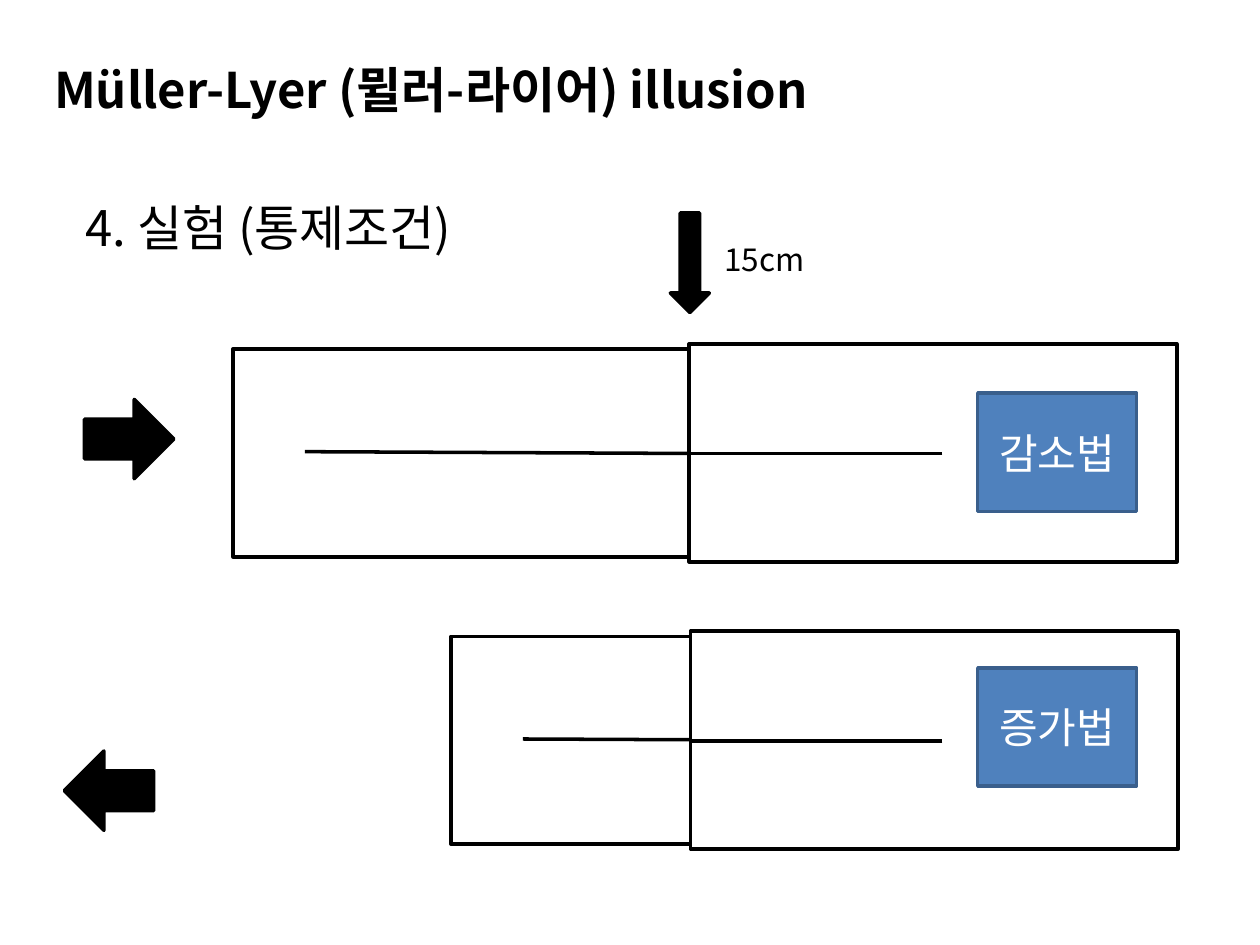
"""Build the Müller-Lyer illusion slide showing the two control conditions."""
from lxml import etree
from pptx import Presentation
from pptx import util as u
from pptx.dml.color import RGBColor
from pptx.enum import shapes, text
from pptx.oxml import ns

BLACK = RGBColor(0x00, 0x00, 0x00)
WHITE = RGBColor(0xFF, 0xFF, 0xFF)
BLUE = RGBColor(0x4F, 0x81, 0xBD)
DARK_BLUE = RGBColor(0x3A, 0x5F, 0x8C)
SHAPE = shapes.MSO_SHAPE
COLUMNS, ROWS = 100, 75


class Board:
    font = "Noto Sans CJK KR"
    stroke = u.Pt(2)

    def __init__(self, presentation):
        self.cell_width = presentation.slide_width / COLUMNS
        self.cell_height = presentation.slide_height / ROWS
        self.slide = presentation.slides.add_slide(presentation.slide_layouts[5])

    def point(self, column, row):
        return u.Emu(round(column * self.cell_width)), u.Emu(round(row * self.cell_height))

    def box(self, column, row, columns, rows):
        return *self.point(column, row), *self.point(columns, rows)

    def set_text(self, shape, wording, size, color=BLACK, bold=False, align=text.PP_ALIGN.LEFT):
        shape.text_frame.text = wording
        shape.text_frame.word_wrap = True
        paragraph = shape.text_frame.paragraphs[0]
        paragraph.alignment = align
        font = paragraph.runs[0].font
        font.name, font.size, font.bold = self.font, u.Pt(size), bold
        font.color.rgb = color
        properties = paragraph.runs[0]._r.get_or_add_rPr()
        etree.SubElement(properties, ns.qn("a:ea"), typeface=self.font)

    def title(self, wording, *box):
        title = self.slide.shapes.title
        title.left, title.top, title.width, title.height = self.box(*box)
        self.set_text(title, wording, 28, bold=True)
        title.text_frame.auto_size = text.MSO_AUTO_SIZE.NONE
        title.text_frame.vertical_anchor = text.MSO_ANCHOR.TOP

    def label(self, wording, size, *box):
        self.set_text(self.slide.shapes.add_textbox(*self.box(*box)), wording, size)

    def shape(self, kind, *box, fill=BLACK, line=BLACK, parent=None):
        shape = (parent or self.slide).shapes.add_shape(kind, *self.box(*box))
        shape.shadow.inherit = False
        shape.fill.solid()
        shape.fill.fore_color.rgb = fill
        shape.line.color.rgb = line
        shape.line.width = self.stroke
        return shape

    def card(self, box, start, end):
        group = self.slide.shapes.add_group_shape()
        self.shape(SHAPE.RECTANGLE, *box, fill=WHITE, parent=group)
        line = group.shapes.add_connector(
            shapes.MSO_CONNECTOR.STRAIGHT, *self.point(*start), *self.point(*end))
        line.line.color.rgb = BLACK
        line.line.width = self.stroke
        etree.SubElement(line._element.spPr, ns.qn("a:effectLst"))

    def trial(self, method, row, slider, cover, button_row):
        middle = row + 8.7
        self.card((slider, row + 0.4, 38.7, 16.5),
                  (slider + 5.7, middle - 0.15), (slider + 38.7, middle))
        self.card((cover, row, 38.7, 17.3), (74.8, middle), (cover, middle))
        button = self.shape(SHAPE.FLOWCHART_PROCESS, 77.6, button_row, 12.6, 9.4,
                            fill=BLUE, line=DARK_BLUE)
        self.set_text(button, method, 24, WHITE, align=text.PP_ALIGN.CENTER)
        button.text_frame.vertical_anchor = text.MSO_ANCHOR.MIDDLE


def main():
    presentation = Presentation()
    presentation.slide_width, presentation.slide_height = u.Inches(10), u.Inches(7.5)
    board = Board(presentation)
    board.title("Müller-Lyer (뮐러-라이어) illusion", 3.3, 4.2, 63.2, 5.7)
    board.label("4. 실험 (통제조건)", 28, 5.8, 15.2, 64.6, 5.7)
    board.label("15cm", 18, 56.5, 18.6, 8.5, 4)
    board.shape(SHAPE.DOWN_ARROW, 53.2, 16.9, 3.1, 7.9)
    board.shape(SHAPE.RIGHT_ARROW, 6.7, 31.7, 7.1, 6.3)
    board.shape(SHAPE.RIGHT_ARROW, 5.1, 59.6, 7.1, 6.3).rotation = 180
    board.trial("감소법", row=27.3, slider=18.5, cover=54.7, button_row=31.2)
    board.trial("증가법", row=50.1, slider=35.8, cover=54.8, button_row=53)
    presentation.save("out.pptx")


if __name__ == "__main__":
    main()
